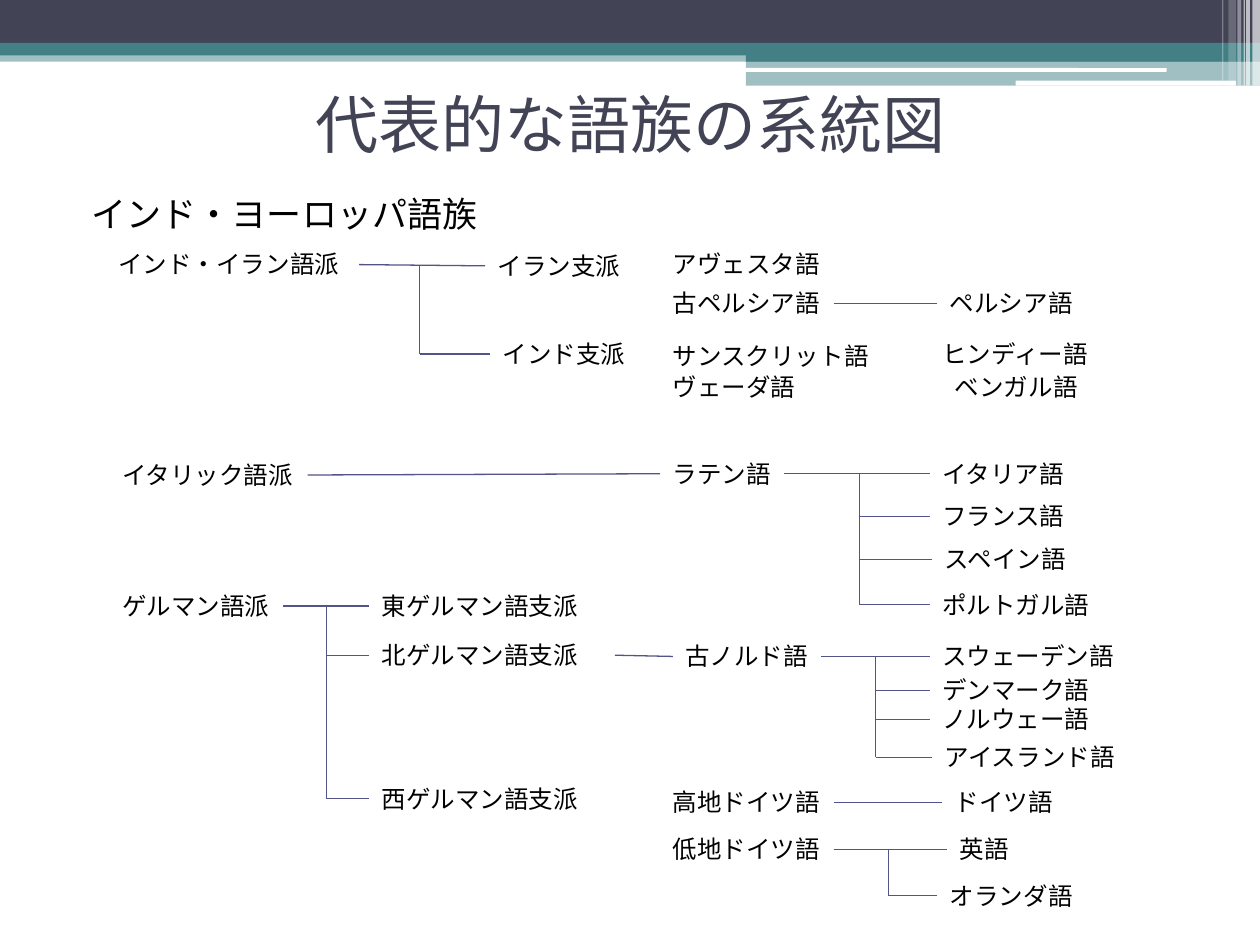
import collections

import lxml.etree
import pptx
import pptx.dml.color
import pptx.enum.shapes
import pptx.enum.text
import pptx.oxml.ns
import pptx.util

RGBColor = pptx.dml.color.RGBColor
SHAPE = pptx.enum.shapes.MSO_SHAPE
ALIGN = pptx.enum.text.PP_ALIGN
ANCHOR = pptx.enum.text.MSO_ANCHOR
qn = pptx.oxml.ns.qn

NAVY = RGBColor(0x42, 0x44, 0x56)
TEAL = RGBColor(0x43, 0x80, 0x86)
WHITE = RGBColor(0xFF, 0xFF, 0xFF)
BLACK = RGBColor(0x00, 0x00, 0x00)
INDIGO = RGBColor(0x53, 0x54, 0x8A)

SLIDE_W, SLIDE_H = pptx.util.Inches(10), pptx.util.Inches(7.5)
COLS, ROWS = 100, 75
LABEL_H = 3.4

Box = collections.namedtuple("Box", "x y w h")


def col(n):
    """Return the length of n grid columns."""
    return round(SLIDE_W * n / COLS)


def row(n):
    """Return the length of n grid rows."""
    return round(SLIDE_H * n / ROWS)


def add_text(s, box, text, size=14, font="TeX Gyre Schola", color=BLACK,
             align=ALIGN.LEFT, anchor=ANCHOR.TOP, wrap=True, grow=False,
             before=0, indent=0):
    """Place one paragraph of formatted text in a box and return its shape."""
    sp = s.shapes.add_textbox(col(box.x), row(box.y), col(box.w), row(box.h))
    tf = sp.text_frame
    tf.word_wrap = wrap
    tf.vertical_anchor = anchor
    if grow:
        tf.auto_size = pptx.enum.text.MSO_AUTO_SIZE.SHAPE_TO_FIT_TEXT
    p = tf.paragraphs[0]
    p.alignment = align
    p.space_before = pptx.util.Pt(before)
    p._p.get_or_add_pPr().set("marL", str(col(indent)))
    r = p.add_run()
    r.text = text
    r.font.size = pptx.util.Pt(size)
    r.font.name = font
    r.font.color.rgb = color
    return sp


def add_bar(s, box, color, alpha=100, kind=SHAPE.RECTANGLE):
    """Draw a borderless bar with the given opacity in percent."""
    sp = s.shapes.add_shape(kind, col(box.x), row(box.y), col(box.w), row(box.h))
    sp.shadow.inherit = False
    sp.line.fill.background()
    sp.fill.solid()
    sp.fill.fore_color.rgb = color
    if alpha < 100:
        clr = sp._element.spPr.find(f".//{qn('a:srgbClr')}")
        lxml.etree.SubElement(clr, qn("a:alpha")).set("val", str(alpha * 1000))


def add_link(s, start, end, parent=None, child=None):
    """Draw a straight line, joined to a parent's right and a child's left."""
    line = s.shapes.add_connector(
        pptx.enum.shapes.MSO_CONNECTOR.STRAIGHT, *start, *end)
    line.line.color.rgb = INDIGO
    line.line.width = pptx.util.Pt(0.75)
    lxml.etree.SubElement(line._element.spPr, qn("a:effectLst"))
    if parent is not None:
        line.begin_connect(parent, 3)
    if child is not None:
        line.end_connect(child, 1)


def left_mid(sp):
    """Return the middle of a shape's left side."""
    return sp.left, sp.top + sp.height // 2


def right_mid(sp):
    """Return the middle of a shape's right side."""
    return sp.left + sp.width, sp.top + sp.height // 2


def add_fork(s, box, parent, children, trunk=None):
    """Link a parent to its first child and hang the others on a trunk."""
    first, *others = children
    start = right_mid(parent)
    add_link(s, start, left_mid(first), parent, first)
    if others:
        x = col(box.x + trunk)
        add_link(s, (x, start[1]), (x, left_mid(others[-1])[1]))
    for child in others:
        end = left_mid(child)
        add_link(s, (x, end[1]), end, child=child)


def header(s, box):
    """Draw the layered header bands with the stripes at their right end."""
    half = box.x + box.w * 0.592
    for x, y, w, h, color, alpha in (
            (box.x, 4, box.w, 0.9, TEAL, 50),
            (box.x, 0, box.w, 3.4, NAVY, 100),
            (box.x, 3.4, box.w, 1, TEAL, 100),
            (half, 3.9, box.w - half, 1, TEAL, 100),
            (half, 4.8, box.w - half, 2, TEAL, 50)):
        add_bar(s, Box(x, box.y + y, w, h), color, alpha)
    for x, y, w, h in ((59.1, 5.4, 33.5, 0.3), (80.6, 6.4, 17.5, 0.4)):
        add_bar(s, Box(box.x + x, box.y + y, w, h), WHITE,
                kind=SHAPE.ROUNDED_RECTANGLE)
    for x, w, h, alpha in (
            (99.4, 0.6, box.h, 65), (98.9, 0.3, box.h, 65),
            (98.7, 0.1, box.h, 60), (98.2, 0.3, box.h, 40),
            (97.5, 0.6, 6.4, 20), (97, 0.1, 6.4, 30)):
        add_bar(s, Box(box.x + x, box.y, w, h), WHITE, alpha)


def headings(s, box):
    """Place the slide title above the name of the language family."""
    add_text(s, Box(box.x, box.y, box.w, box.h * 0.72), "代表的な語族の系統図",
             size=36, font="Karla", color=NAVY, align=ALIGN.CENTER,
             anchor=ANCHOR.MIDDLE)
    add_text(s, Box(box.x, box.y + box.h * 0.69, 34.6, box.h * 0.31),
             "インド・ヨーロッパ語族", size=20, before=3, indent=1.2)


def branch(s, box, labels, forks):
    """Place the labels of one branch and the forks between them."""
    nodes = {}
    for text, x, y, *width in labels:
        w = width[0] if width else 2 + 1.96 * len(text)
        nodes[text] = add_text(s, Box(box.x + x, box.y + y, w, LABEL_H), text,
                               wrap=bool(width), grow=True)
    for parent, children, *trunk in forks:
        add_fork(s, box, nodes[parent], [nodes[c] for c in children], *trunk)


def indo_iranian(s, box):
    """Draw the Indo-Iranian branch."""
    branch(s, box, (
        ("インド・イラン語派", 0, 0, 20.1),
        ("イラン支派", 30.1, 0.1), ("インド支派", 30.5, 7.1),
        ("アヴェスタ語", 44, 0), ("古ペルシア語", 44, 3.1),
        ("サンスクリット語", 44, 7.3), ("ヴェーダ語", 44, 9.7, 15.7),
        ("ペルシア語", 66, 3.1), ("ヒンディー語", 65.4, 7.1),
        ("ベンガル語", 66.4, 9.7),
    ), (
        ("インド・イラン語派", ("イラン支派", "インド支派"), 24.9),
        ("古ペルシア語", ("ペルシア語",)),
    ))


def italic(s, box):
    """Draw the Italic branch."""
    romance = ("イタリア語", "フランス語", "スペイン語", "ポルトガル語")
    places = ((65.1, 0), (65.1, 3.4), (65.3, 6.8), (65.1, 10.4))
    branch(s, box, (
        ("イタリック語派", 0, 0.1), ("ラテン語", 43.7, 0),
        *((text, *place) for text, place in zip(romance, places)),
    ), (
        ("イタリック語派", ("ラテン語",)),
        ("ラテン語", romance, 59.5),
    ))


def germanic(s, box):
    """Draw the Germanic branch."""
    groups = ("東ゲルマン語支派", "北ゲルマン語支派", "西ゲルマン語支派")
    nordic = ("スウェーデン語", "デンマーク語", "ノルウェー語", "アイスランド語")
    places = ((65.1, 4), (65.1, 6.7), (65.1, 9), (65.3, 12))
    branch(s, box, (
        ("ゲルマン語派", 0, 0),
        (groups[0], 20.6, 0), (groups[1], 20.6, 3.9, 19.5),
        (groups[2], 20.6, 15.3), ("古ノルド語", 44.7, 4),
        *((text, *place) for text, place in zip(nordic, places)),
        ("高地ドイツ語", 43.7, 15.6, 13.8), ("低地ドイツ語", 43.7, 19.3),
        ("ドイツ語", 66.1, 15.6), ("英語", 66.5, 19.3), ("オランダ語", 65.7, 23),
    ), (
        ("ゲルマン語派", groups, 17.2),
        (groups[1], ("古ノルド語",)),
        ("古ノルド語", nordic, 60.8),
        ("高地ドイツ語", ("ドイツ語",)),
        ("低地ドイツ語", ("英語", "オランダ語"), 61.8),
    ))


def main():
    """Build the slide and save it."""
    prs = pptx.Presentation()
    prs.slide_width, prs.slide_height = SLIDE_W, SLIDE_H
    s = prs.slides.add_slide(prs.slide_layouts[6])
    header(s, Box(0, 0, COLS, 6.8))
    headings(s, Box(5.1, 4.4, 89.9, 15))
    indo_iranian(s, Box(8.4, 19.3, 80, 14))
    italic(s, Box(8.7, 35.9, 80, 14))
    germanic(s, Box(8.7, 46.4, 80, 27))
    prs.save("out.pptx")


if __name__ == "__main__":
    main()
